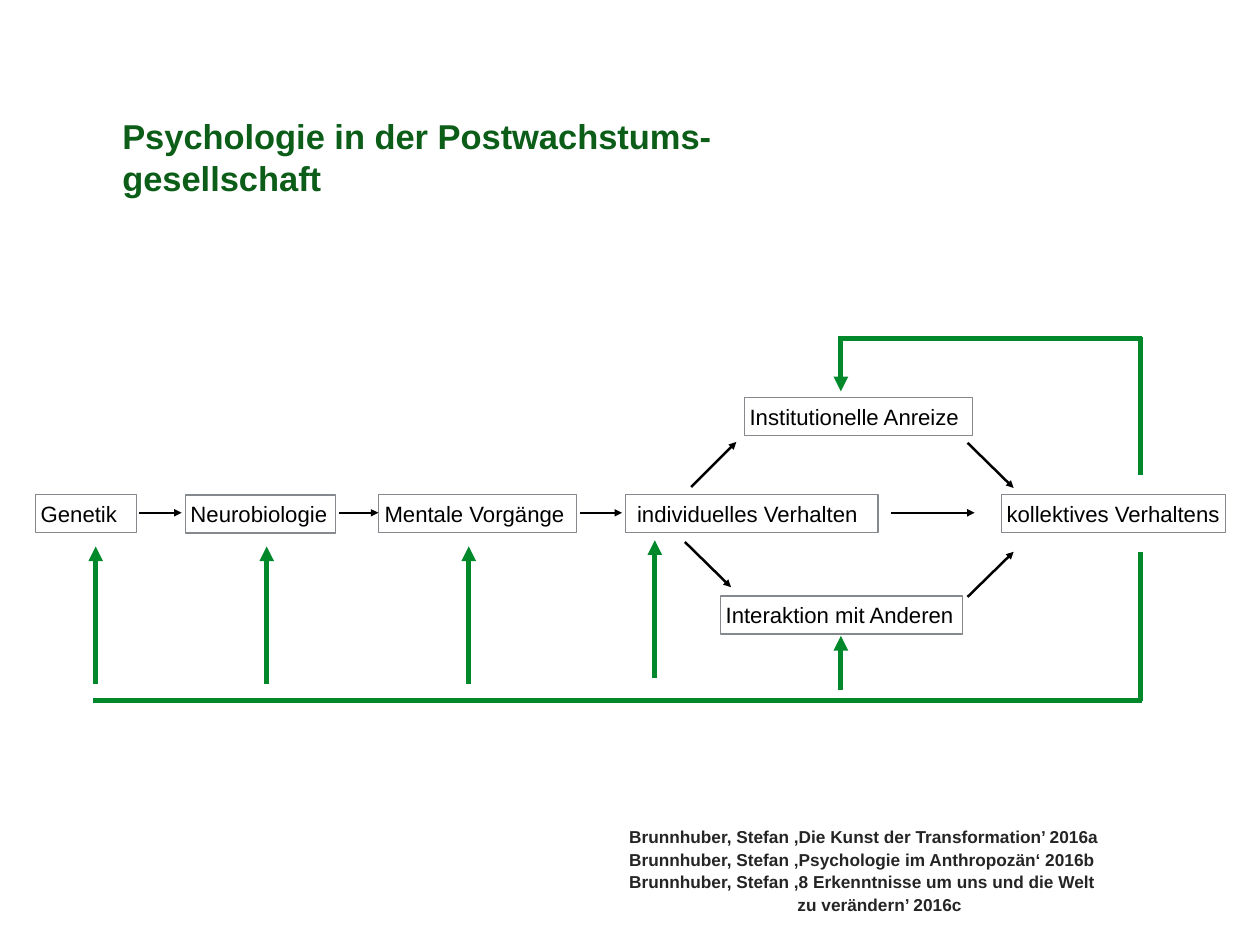
from dataclasses import dataclass

from pptx import Presentation
from pptx.dml.color import RGBColor
from pptx.enum.shapes import MSO_CONNECTOR as Conn, MSO_SHAPE as Form
from pptx.enum.text import MSO_ANCHOR as Anchor, MSO_AUTO_SIZE as Fit, PP_ALIGN as Align
from pptx.oxml.ns import qn
from pptx.util import Emu, Pt
from lxml.etree import SubElement

PX = 9144  # EMU per px, 100 px to the inch
FONT = "Arial"
BLACK = RGBColor(0x00, 0x00, 0x00)
GREY = RGBColor(0x85, 0x88, 0x8D)
GREEN = RGBColor(0x00, 0x88, 0x2B)
DARK = RGBColor(0x0B, 0x5D, 0x18)
INK = RGBColor(0x25, 0x25, 0x25)


@dataclass(frozen=True)
class Box:
    text: str
    left: int
    top: int
    width: int
    inset: int = 6


@dataclass(frozen=True)
class Line:
    x1: int
    y1: int
    x2: int
    y2: int
    color: RGBColor = BLACK
    width: int = 2
    arrow: bool = True


def px(n: int) -> Emu:
    return Emu(n * PX)


def place(shape, left: int, top: int, width: int, height: int) -> None:
    shape.left, shape.top = px(left), px(top)
    shape.width, shape.height = px(width), px(height)


def setup(frame, inset: int = 0, pad: int = 0, wrap: bool = True) -> None:
    frame.auto_size = Fit.NONE
    frame.word_wrap = wrap
    frame.vertical_anchor = Anchor.MIDDLE
    frame.margin_left = px(inset)
    frame.margin_right = frame.margin_top = frame.margin_bottom = px(pad)


def write(para, text: str, size: int, color: RGBColor, bold: bool = False) -> None:
    para.alignment = Align.LEFT
    run = para.add_run()
    run.text = text
    font = run.font
    font.name, font.size, font.bold = FONT, Pt(size), bold
    font.color.rgb = color


def draw_box(shapes, box: Box) -> None:
    shape = shapes.add_shape(Form.RECTANGLE, px(box.left), px(box.top), px(box.width), px(43))
    shape.shadow.inherit = False
    shape.fill.background()
    shape.line.color.rgb = GREY
    shape.line.width = Pt(1)
    setup(shape.text_frame, box.inset, 6, wrap=False)
    write(shape.text_frame.paragraphs[0], box.text, 18, BLACK)


def draw_line(shapes, line: Line) -> None:
    conn = shapes.add_connector(Conn.STRAIGHT, px(line.x1), px(line.y1), px(line.x2), px(line.y2))
    conn.line.color.rgb = line.color
    conn.line.width = Pt(line.width)
    if line.arrow:
        SubElement(conn.line._ln, qn("a:tailEnd"), type="triangle")
    SubElement(conn._element.spPr, qn("a:effectLst"))


# Steps of the causal chain
ROW = 558
BOXES = [
    Box("Genetik", 40, ROW, 114),
    Box("Interaktion mit Anderen", 813, 673, 273),
    Box("Institutionelle Anreize", 840, 449, 258),
    Box("kollektives Verhaltens", 1130, ROW, 253),
    Box("Neurobiologie", 209, 559, 170),
    Box("Mentale Vorgänge", 427, ROW, 224, 7),
    Box("individuelles Verhalten", 706, ROW, 285, 13),
]

# Forward arrows: along the row, then the diagonals
MID = 579
STEPS = [Line(a, MID, b, MID) for a, b in ((157, 205), (383, 427), (655, 702), (1006, 1100))]
STEPS += [
    Line(780, 550, 831, 499),
    Line(773, 612, 825, 663),
    Line(1092, 674, 1144, 623),
    Line(1092, 500, 1144, 551),
]

# Feedback loop: frame lines, then arrows back to each step
FRAME = [
    (1287, 792, 1287, 623),
    (1287, 536, 1287, 381),
    (946, 382, 1289, 382),
    (105, 791, 1289, 791),
]
BACK = [(x, y + 155, x, y) for x, y in ((739, 610), (529, 617), (301, 617), (108, 617))]
BACK += [(949, 779, 949, 718), (949, 381, 949, 442)]
LOOP = [Line(*ends, GREEN, 4, False) for ends in FRAME]
LOOP += [Line(*ends, GREEN, 4) for ends in BACK]

# Sources, each with its left indent
BOOKS = [
    ("Brunnhuber, Stefan ,Die Kunst der Transformation’ 2016a", 0),
    ("Brunnhuber, Stefan ‚Psychologie im Anthropozän‘ 2016b", 0),
    ("Brunnhuber, Stefan ,8 Erkenntnisse um uns und die Welt", 0),
    ("zu verändern’ 2016c", 190),
]


def main() -> None:
    deck = Presentation()
    deck.slide_width, deck.slide_height = px(1422), px(1067)
    slide = deck.slides.add_slide(deck.slide_layouts[1])
    shapes = slide.shapes

    # Title
    title = shapes.title
    place(title, 138, 130, 829, 94)
    setup(title.text_frame)
    write(title.text_frame.paragraphs[0], "Psychologie in der Postwachstums- gesellschaft", 28, DARK, True)

    # Source list
    body = slide.placeholders[1]
    place(body, 710, 934, 541, 98)
    frame = body.text_frame
    setup(frame)
    for i, (text, indent) in enumerate(BOOKS):
        para = frame.add_paragraph() if i else frame.paragraphs[0]
        write(para, text, 14, INK, True)
        para.space_before = Pt(1.8)
        props = para._p.get_or_add_pPr()
        props.set("marL", str(px(indent)))
        props.set("indent", "0")
        SubElement(props, qn("a:buNone"))

    # Diagram
    for box in BOXES:
        draw_box(shapes, box)
    for line in STEPS + LOOP:
        draw_line(shapes, line)

    deck.save("out.pptx")


if __name__ == "__main__":
    main()
